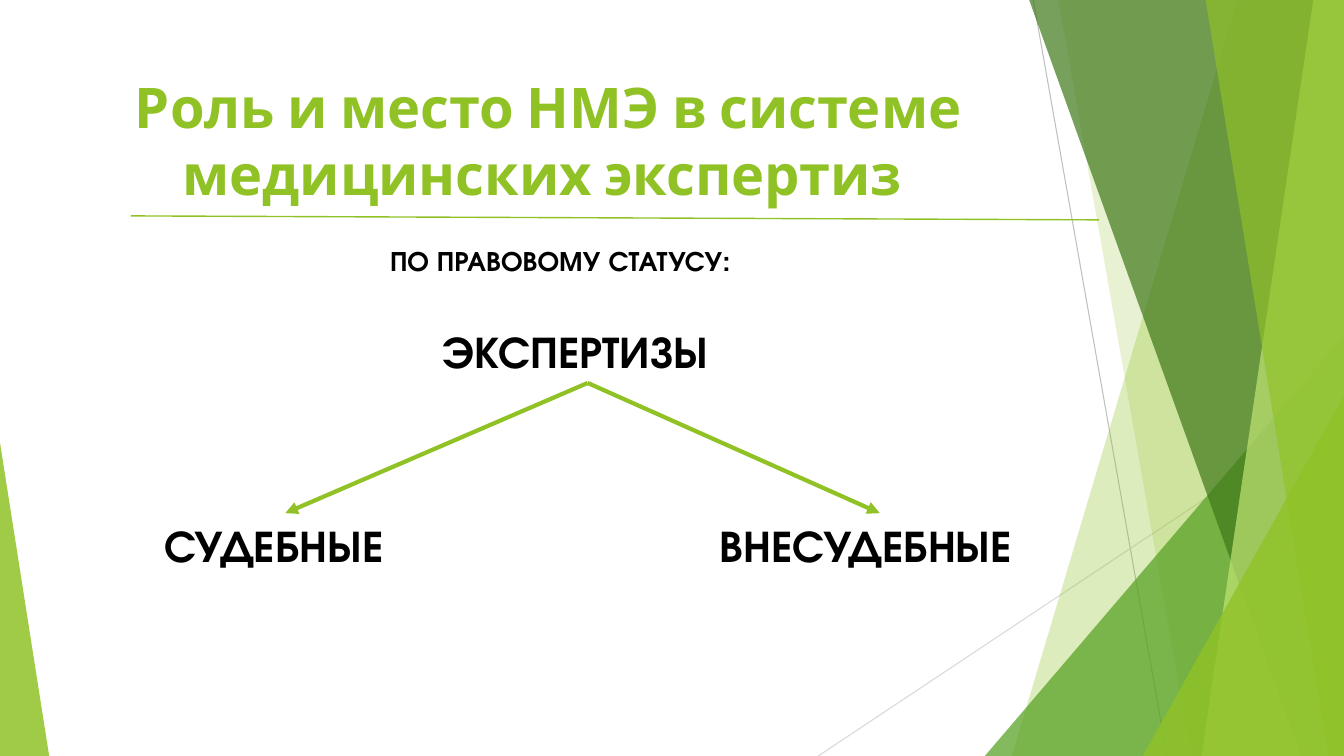
from dataclasses import dataclass
from typing import NamedTuple

import lxml.etree
import pptx
import pptx.dml.color
import pptx.enum.shapes
import pptx.enum.text
import pptx.oxml.ns
import pptx.util
from pptx.util import Cm

WIDTH, HEIGHT = 33.87, 19.05


@dataclass(frozen=True)
class Theme:
    lime: str = "90C226"
    pale_lime: str = "C0E474"
    green: str = "54A021"
    dark_green: str = "3F7819"
    grey: str = "BFBFBF"
    light_grey: str = "D9D9D9"
    black: str = "000000"
    title_font: str = "Cabin"
    body_font: str = "TeX Gyre Adventor"
    title_size: int = 40
    branch_size: int = 32
    caption_size: int = 20


class Band(NamedTuple):
    """Facet running to the right edge, with a slanted left side."""
    top_x: float
    bottom_x: float
    color: str
    opacity: int


class Corner(NamedTuple):
    """Right triangle standing on the bottom edge."""
    left: float
    top: float
    width: float
    apex: float
    color: str
    opacity: int


class Stroke(NamedTuple):
    start: tuple[float, float]
    end: tuple[float, float]
    color: str
    weight: float
    arrow: bool = False


class Label(NamedTuple):
    text: str
    left: float
    top: float
    width: float
    height: float
    size: int


THEME = Theme()
FORK = (14.81, 9.65)
BRANCH_TOP = 12.93

GUIDES = [
    Stroke((26.04, 0), (29.41, HEIGHT), THEME.grey, 0.75),
    Stroke((WIDTH, 10.24), (20.62, HEIGHT), THEME.light_grey, 0.75),
]
# Right-hand facets, from back to front, then the left corner
FACETS = [
    Band(31.19, 25.5, THEME.lime, 30),
    Band(26.67, 30.02, THEME.lime, 20),
    Corner(24.82, 8.46, 9.05, 1, THEME.green, 72),
    Band(25.93, 32.79, THEME.dark_green, 70),
    Band(33.1, 30.28, THEME.pale_lime, 70),
    Band(30.38, 33.48, THEME.lime, 65),
    Corner(28.8, 9.98, 5.07, 1, THEME.lime, 80),
    Corner(0, 11.15, 1.24, 0, THEME.lime, 85),
]
TITLE_RULE = Stroke((3.3, 5.44), (27.69, 5.54), THEME.lime, 1)
LABELS = [
    Label("ПО ПРАВОВОМУ СТАТУСУ:", 9.58, 6.02, 9.88, 1.12, THEME.caption_size),
    Label("ЭКСПЕРТИЗЫ", 10.9, 8.03, 7.85, 1.63, THEME.branch_size),
    Label("СУДЕБНЫЕ", 3.89, BRANCH_TOP, 6.58, 1.63, THEME.branch_size),
    Label("ВНЕСУДЕБНЫЕ", 17.88, BRANCH_TOP, 8.61, 1.63, THEME.branch_size),
]
BRANCHES = [Stroke(FORK, (x, BRANCH_TOP), THEME.lime, 3, arrow=True)
            for x in (7.19, 22.17)]


def rgb(color: str) -> pptx.dml.color.RGBColor:
    return pptx.dml.color.RGBColor.from_string(color)


def add_child(parent, tag: str, **attributes: str) -> None:
    child = lxml.etree.SubElement(parent, pptx.oxml.ns.qn(tag))
    for key, value in attributes.items():
        child.set(key, value)


def draw_facet(slide, facet: Band | Corner) -> None:
    if isinstance(facet, Band):
        outline = slide.shapes.build_freeform(Cm(facet.top_x), Cm(-0.02))
        outline.add_line_segments(
            [(Cm(WIDTH), Cm(-0.02)), (Cm(WIDTH), Cm(HEIGHT)),
             (Cm(facet.bottom_x), Cm(HEIGHT))], close=True)
        shape = outline.convert_to_shape()
    else:
        shape = slide.shapes.add_shape(
            pptx.enum.shapes.MSO_SHAPE.ISOSCELES_TRIANGLE, Cm(facet.left),
            Cm(facet.top), Cm(facet.width), Cm(HEIGHT - facet.top))
        shape.adjustments[0] = facet.apex
    shape.shadow.inherit = False
    shape.line.fill.background()
    shape.fill.solid()
    shape.fill.fore_color.rgb = rgb(facet.color)
    fill_color = next(shape.element.spPr.iter(pptx.oxml.ns.qn("a:srgbClr")))
    add_child(fill_color, "a:alpha", val=str(facet.opacity * 1000))


def draw_stroke(slide, stroke: Stroke) -> None:
    line = slide.shapes.add_connector(
        pptx.enum.shapes.MSO_CONNECTOR.STRAIGHT,
        *map(Cm, stroke.start + stroke.end))
    line.line.color.rgb = rgb(stroke.color)
    line.line.width = pptx.util.Pt(stroke.weight)
    properties = line.element.spPr
    if stroke.arrow:
        add_child(properties.find(pptx.oxml.ns.qn("a:ln")), "a:tailEnd", type="triangle")
    add_child(properties, "a:effectLst")


def add_text(slide, text: str, *, left: float, top: float, width: float,
             height: float, size: int, font: str = THEME.body_font,
             color: str = THEME.black, wrap: bool = False,
             align=pptx.enum.text.PP_ALIGN.LEFT,
             fit=pptx.enum.text.MSO_AUTO_SIZE.SHAPE_TO_FIT_TEXT) -> None:
    frame = slide.shapes.add_textbox(
        Cm(left), Cm(top), Cm(width), Cm(height)).text_frame
    frame.word_wrap = wrap
    frame.auto_size = fit
    paragraph = frame.paragraphs[0]
    paragraph.alignment = align
    run = paragraph.add_run()
    run.text = text
    run.font.name = font
    run.font.size = pptx.util.Pt(size)
    run.font.bold = True
    run.font.color.rgb = rgb(color)


def main() -> None:
    deck = pptx.Presentation()
    deck.slide_width, deck.slide_height = Cm(WIDTH), Cm(HEIGHT)
    slide = deck.slides.add_slide(deck.slide_layouts[6])

    # Background decoration
    for guide in GUIDES:
        draw_stroke(slide, guide)
    for facet in FACETS:
        draw_facet(slide, facet)

    # Title and its rule
    add_text(slide, "Роль и место НМЭ в системе медицинских экспертиз ",
             left=1.88, top=1.7, width=23.88, height=3.66,
             size=THEME.title_size, font=THEME.title_font, color=THEME.lime,
             wrap=True, align=pptx.enum.text.PP_ALIGN.CENTER,
             fit=pptx.enum.text.MSO_AUTO_SIZE.NONE)
    draw_stroke(slide, TITLE_RULE)

    # Classification tree
    for label in LABELS:
        add_text(slide, **label._asdict())
    for branch in BRANCHES:
        draw_stroke(slide, branch)

    deck.save("out.pptx")


if __name__ == "__main__":
    main()
